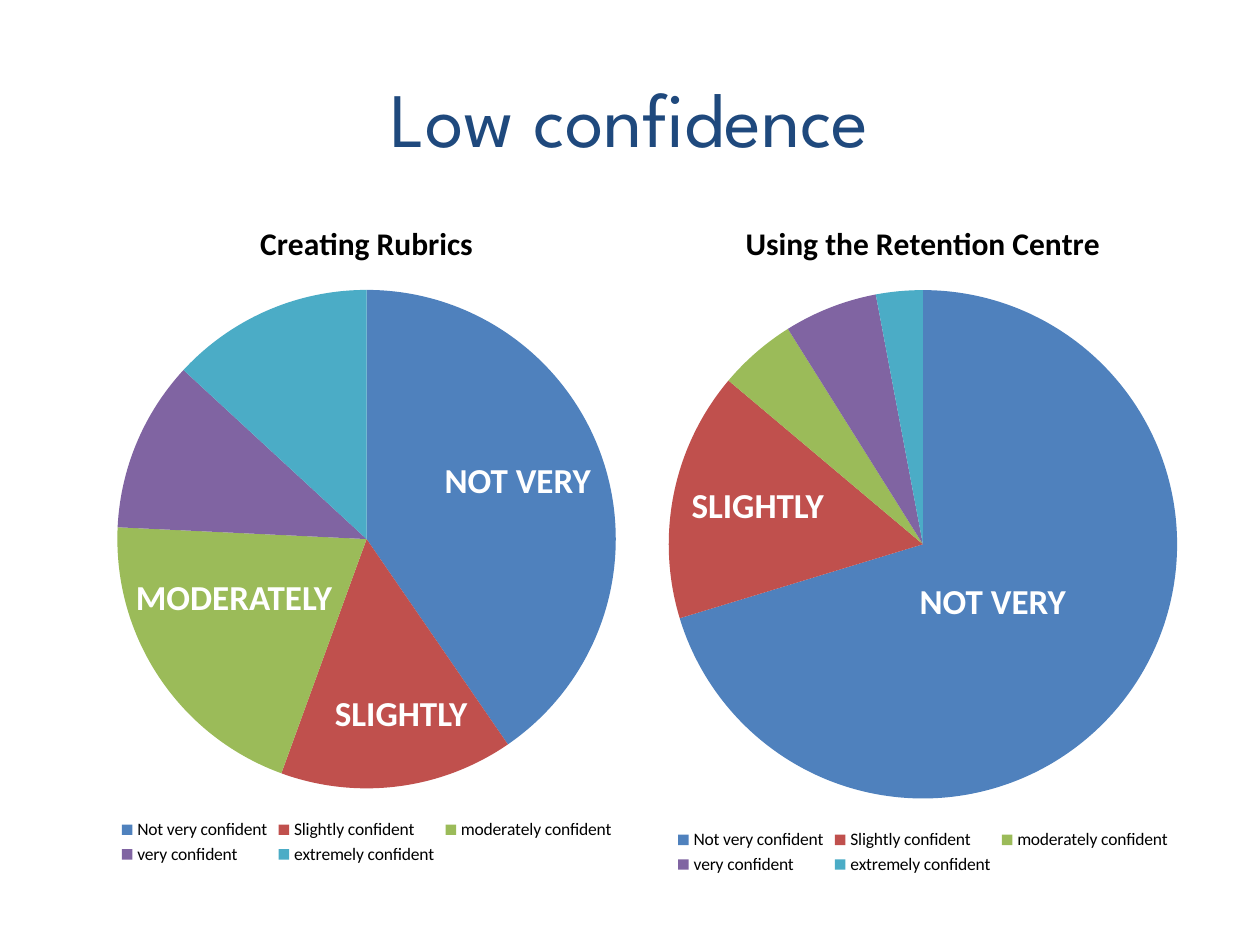
from dataclasses import dataclass

from pptx import Presentation
from pptx.chart.data import CategoryChartData
from pptx.dml.color import RGBColor
from pptx.enum.chart import XL_CHART_TYPE, XL_LEGEND_POSITION
from pptx.enum.text import MSO_ANCHOR, MSO_AUTO_SIZE, PP_ALIGN
from pptx.util import Inches, Pt


@dataclass(frozen=True)
class Theme:
    """Colours, fonts and type sizes of the slide."""
    heading_font: str = "League Spartan"
    body_font: str = "Calibri"
    heading: str = "1F497D"
    text: str = "000000"
    label: str = "FFFFFF"
    slices: tuple = ("4F81BD", "C0504D", "9BBB59", "8064A2", "4BACC6")
    heading_size: int = 44
    label_size: int = 20
    chart_title_size: int = 18
    legend_size: int = 10


class SlideBuilder:
    """Adds styled elements to one slide."""

    def __init__(self, slide, theme):
        self.slide = slide
        self.theme = theme

    def style(self, font, name, size, color, bold=False):
        """Apply typeface, size, colour and weight to a font."""
        font.name = name
        font.size = Pt(size)
        font.bold = bold
        font.color.rgb = RGBColor.from_string(color)

    def title(self, text, left, top, width, height):
        """Place and format the slide title."""
        heading = self.slide.shapes.title
        heading.left, heading.top = Inches(left), Inches(top)
        heading.width, heading.height = Inches(width), Inches(height)
        heading.text_frame.text = text
        heading.text_frame.vertical_anchor = MSO_ANCHOR.MIDDLE
        paragraph = heading.text_frame.paragraphs[0]
        paragraph.alignment = PP_ALIGN.CENTER
        self.style(paragraph.runs[0].font, self.theme.heading_font,
                   self.theme.heading_size, self.theme.heading)

    def pie(self, title, series_name, levels, shares, left, top, width, height):
        """Add a pie chart with a title and a legend below."""
        theme = self.theme
        answers = CategoryChartData()
        answers.categories = levels
        answers.add_series(series_name, shares)
        chart = self.slide.shapes.add_chart(
            XL_CHART_TYPE.PIE, Inches(left), Inches(top),
            Inches(width), Inches(height), answers).chart
        self.style(chart.font, theme.body_font, theme.legend_size, theme.text)
        chart.has_title = True
        chart.chart_title.include_in_layout = False
        chart.chart_title.text_frame.text = title
        self.style(chart.chart_title.text_frame.paragraphs[0].runs[0].font,
                   theme.body_font, theme.chart_title_size, theme.text, True)
        chart.has_legend = True
        chart.legend.position = XL_LEGEND_POSITION.BOTTOM
        chart.legend.include_in_layout = False
        plot = chart.plots[0]
        plot.vary_by_categories = True
        for index, color in enumerate(theme.slices):
            fill = plot.series[0].points[index].format.fill
            fill.solid()
            fill.fore_color.rgb = RGBColor.from_string(color)

    def label(self, text, left, top, width, height=0.44):
        """Add a bold label over a slice."""
        frame = self.slide.shapes.add_textbox(
            Inches(left), Inches(top), Inches(width), Inches(height)).text_frame
        frame.word_wrap = False
        frame.auto_size = MSO_AUTO_SIZE.SHAPE_TO_FIT_TEXT
        frame.text = text
        self.style(frame.paragraphs[0].runs[0].font, self.theme.body_font,
                   self.theme.label_size, self.theme.label, True)


def main():
    """Build and save the confidence slide."""
    presentation = Presentation()
    presentation.slide_width, presentation.slide_height = Inches(10), Inches(7.5)
    title_only = presentation.slide_layouts[5]
    builder = SlideBuilder(presentation.slides.add_slide(title_only), Theme())

    levels = ("Not very confident", "Slightly confident", "moderately confident",
              "very confident", "extremely confident")
    builder.title("Low confidence", 0.5, 0.3, 9, 1.25)

    builder.pie("Creating Rubrics", "Series 1", levels, (40, 15, 20, 11, 13),
                0.51, 1.55, 4.8, 5.35)
    builder.label("NOT VERY", 3.43, 3.59, 1.37)
    builder.label("SLIGHTLY", 2.56, 5.44, 1.26)
    builder.label("MODERATELY", 0.98, 4.52, 1.77)

    builder.pie("Using the Retention Centre", "Using the Retention Centre", levels,
                (71, 16, 5, 6, 3), 5, 1.55, 4.65, 5.43)
    builder.label("NOT VERY", 7.2, 4.55, 1.37)
    builder.label("SLIGHTLY", 5.39, 3.79, 1.26)

    presentation.save("out.pptx")


if __name__ == "__main__":
    main()
